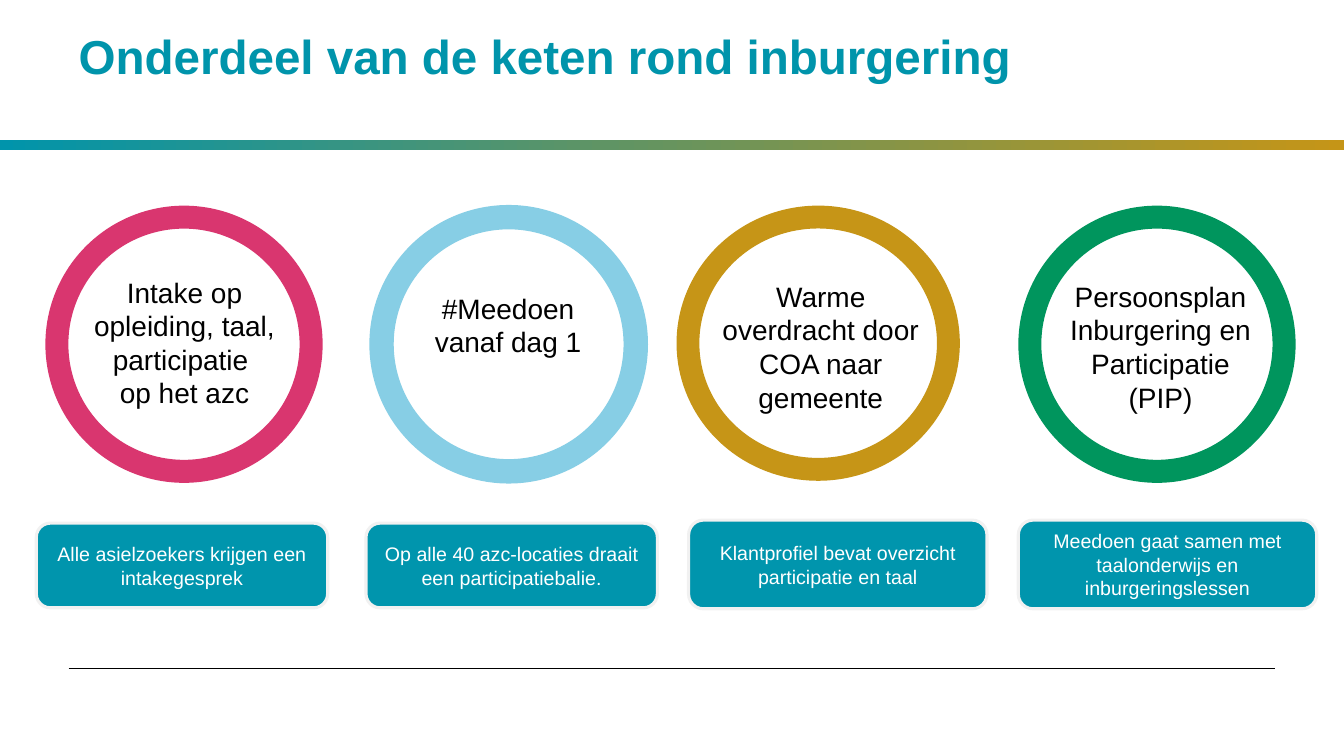
from copy import deepcopy
from dataclasses import dataclass

from pptx import Presentation
from pptx.dml.color import RGBColor
from pptx.enum.shapes import MSO_CONNECTOR, MSO_SHAPE
from pptx.enum.text import MSO_ANCHOR, MSO_AUTO_SIZE, PP_ALIGN
from pptx.oxml.ns import qn
from pptx.util import Emu, Pt
from lxml.etree import SubElement


@dataclass(frozen=True)
class Theme:
    """Colours, font and type sizes of the slide."""
    font: str = "Arial"
    title_size: int = 34
    ring_size: int = 20
    card_size: int = 14
    title: str = "0094AB"
    card: str = "0095AD"
    card_edge: str = "F1F1F1"
    ink: str = "000000"
    paper: str = "FFFFFF"
    pink: str = "D9366F"
    sky: str = "87CEE5"
    gold: str = "C69517"
    green: str = "00955D"
    band: tuple = ((0, "0094AB"), (0.45, "5F9464"), (1, "C59517"))


THEME = Theme()
PX_PER_INCH = 100
SLIDE_WIDTH, SLIDE_HEIGHT = 1333, 750

STEPS = [
    (THEME.pink, (45, 204, 275, 275), (69, 268, 228, 145),
     ["Intake op opleiding, taal, participatie ", "op het azc"],
     (36, 519, 289, 84), "Alle asielzoekers krijgen een intakegesprek"),
    (THEME.sky, (367, 204, 275, 275), (390, 284, 228, 77),
     ["#Meedoen\vvanaf dag 1"],
     (363, 519, 289, 84), "Op alle 40 azc-locaties draait een participatiebalie."),
    (THEME.gold, (671, 204, 281, 273), (700, 272, 228, 145),
     ["Warme overdracht door COA naar gemeente"],
     (683, 516, 296, 88), "Klantprofiel bevat overzicht participatie en taal"),
    (THEME.green, (1010, 204, 275, 275), (1037, 272, 228, 145),
     ["Persoonsplan Inburgering en Participatie (PIP)"],
     (1010, 516, 296, 88), "Meedoen gaat samen met taalonderwijs en inburgeringslessen"),
]


def px(length):
    """Turn pixels into EMU."""
    return Emu(length * 914400 // PX_PER_INCH)


def colour(value):
    """Turn a hex value into a colour."""
    return RGBColor.from_string(value)


def write(frame, lines, size, ink, align=PP_ALIGN.CENTER, bold=False):
    """Fill a text frame with paragraphs of one style."""
    frame.word_wrap = True
    for index, line in enumerate(lines):
        para = frame.add_paragraph() if index else frame.paragraphs[0]
        para.text = line
        para.alignment = align
        para.font.name = THEME.font
        para.font.size = Pt(size)
        para.font.bold = bold
        para.font.color.rgb = colour(ink)


def add_title(page, text):
    """Place and style the title placeholder."""
    title = page.shapes.title
    title.left, title.top, title.width, title.height = map(px, (68, 28, 1197, 55))
    frame = title.text_frame
    frame.auto_size = MSO_AUTO_SIZE.NONE
    frame.vertical_anchor = MSO_ANCHOR.TOP
    write(frame, [text], THEME.title_size, THEME.title, PP_ALIGN.LEFT, True)
    frame.paragraphs[0].line_spacing = 0.9


def add_plain_shape(page, kind, place, fill=None):
    """Add a preset shape without shadow or line."""
    shape = page.shapes.add_shape(kind, *map(px, place))
    shape.shadow.inherit = False
    shape.line.fill.background()
    if fill:
        shape.fill.solid()
        shape.fill.fore_color.rgb = colour(fill)
    return shape


def add_band(page):
    """Add the three-colour band under the title."""
    band = add_plain_shape(page, MSO_SHAPE.RECTANGLE, (0, 139, SLIDE_WIDTH, 10))
    band.fill.gradient()
    band.fill.gradient_angle = 0
    stops = next(band._element.spPr.iter(qn("a:gsLst")))
    stops.insert(1, deepcopy(stops[0]))
    for stop, (position, value) in zip(band.fill.gradient_stops, THEME.band):
        stop.position = position
        stop.color.rgb = colour(value)


def add_rule(page):
    """Add the thin footer line."""
    ends = map(px, (68, 663, 1265, 663))
    rule = page.shapes.add_connector(MSO_CONNECTOR.STRAIGHT, *ends)
    rule.line.color.rgb = colour(THEME.ink)
    rule.line.width = Pt(0.5)
    SubElement(rule._element.spPr, qn("a:effectLst"))


def add_ring(page, place, fill):
    """Add a coloured ring."""
    ring = add_plain_shape(page, MSO_SHAPE.DONUT, place, fill)
    ring.adjustments[0] = 0.083
    if fill == THEME.sky:
        ring.line.color.rgb = colour(fill)
        ring.line.width = Pt(1)


def add_label(page, place, lines):
    """Add the text inside a ring."""
    box = page.shapes.add_textbox(*map(px, place))
    write(box.text_frame, lines, THEME.ring_size, THEME.ink)


def add_card(page, place, text):
    """Add a rounded card with an explanation."""
    card = add_plain_shape(page, MSO_SHAPE.ROUNDED_RECTANGLE, place, THEME.card)
    card.line.color.rgb = colour(THEME.card_edge)
    card.line.width = Pt(2.25)
    frame = card.text_frame
    frame.margin_left = frame.margin_right = px(13)
    frame.margin_top = frame.margin_bottom = px(13)
    frame.vertical_anchor = MSO_ANCHOR.MIDDLE
    write(frame, [text], THEME.card_size, THEME.paper)


def main():
    """Build the slide and save the deck."""
    deck = Presentation()
    deck.slide_width, deck.slide_height = px(SLIDE_WIDTH), px(SLIDE_HEIGHT)
    page = deck.slides.add_slide(deck.slide_layouts[5])
    add_band(page)
    add_rule(page)
    add_title(page, "Onderdeel van de keten rond inburgering")
    for fill, ring_place, label_place, lines, card_place, text in STEPS:
        add_ring(page, ring_place, fill)
        add_label(page, label_place, lines)
        add_card(page, card_place, text)
    deck.save("out.pptx")


if __name__ == "__main__":
    main()
